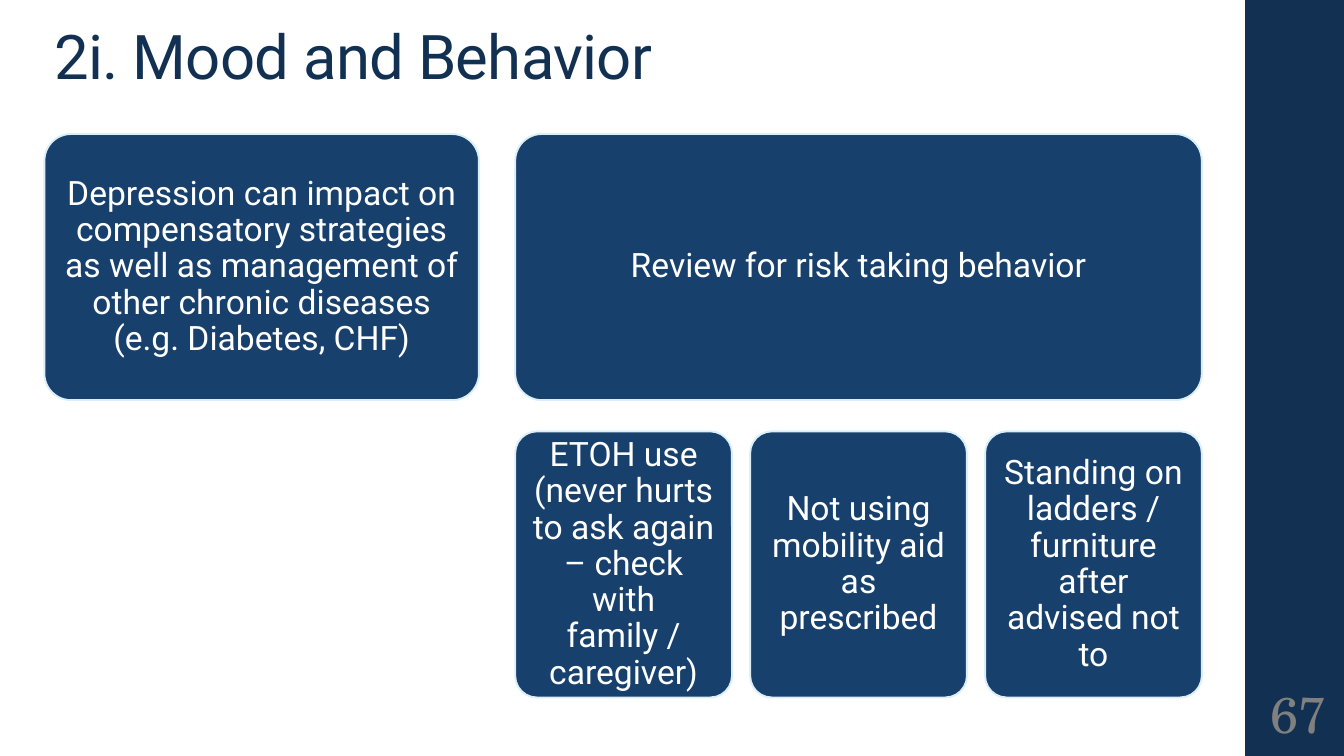
from pptx import Presentation
from pptx.dml.color import RGBColor
from pptx.enum.shapes import MSO_SHAPE
from pptx.enum.text import MSO_ANCHOR, PP_ALIGN
from pptx.util import Inches, Pt

RECTANGLE, ROUNDED = MSO_SHAPE.RECTANGLE, MSO_SHAPE.ROUNDED_RECTANGLE
MIDDLE, BOTTOM = MSO_ANCHOR.MIDDLE, MSO_ANCHOR.BOTTOM
LEFT, CENTER = PP_ALIGN.LEFT, PP_ALIGN.CENTER

NAVY = RGBColor(0x11, 0x30, 0x52)
BLUE = RGBColor(0x17, 0x40, 0x6D)
PALE = RGBColor(0xDB, 0xEF, 0xF9)
WHITE = RGBColor(0xFF, 0xFF, 0xFF)
GRAY = RGBColor(0x80, 0x80, 0x80)
SANS, SERIF = "Roboto", "TeX Gyre Schola"

TITLE = "2i. Mood and Behavior"
PAGE_NUMBER = "67"
DEPRESSION = ("Depression can impact on compensatory strategies as well as "
              "management of other chronic diseases (e.g. Diabetes, CHF)")
RISK = "Review for risk taking behavior"
RISK_EXAMPLES = [
    "ETOH use (never hurts to ask again – check with family / caregiver)",
    "Not using mobility aid as prescribed",
    "Standing on ladders / furniture after advised not to",
]

WIDTH, HEIGHT = 13.33, 7.5
BAND_LEFT, BAND_WIDTH = 12.35, 1
MARGIN = 0.44
CARD_HEIGHT = 2.64
ROW_TOPS = [1.33, 4.28]
DEPRESSION_WIDTH = 4.31
RISK_LEFT = 5.11
EXAMPLE_WIDTH, EXAMPLE_STEP = 2.15, 2.33
RISK_WIDTH = EXAMPLE_STEP * (len(RISK_EXAMPLES) - 1) + EXAMPLE_WIDTH


def write(shape, text, size, font, color, align, anchor, inset=0.1, spacing=0.9):
    frame = shape.text_frame
    frame.word_wrap = True
    frame.vertical_anchor = anchor
    frame.margin_left = frame.margin_right = Inches(inset)
    frame.margin_top = frame.margin_bottom = Inches(min(inset, 0.1))
    frame.text = text
    para = frame.paragraphs[0]
    para.alignment = align
    para.line_spacing = spacing
    span = para.runs[0]
    span.font.size = Pt(size)
    span.font.name = font
    span.font.color.rgb = color
    return span


def add_block(page, kind, left, top, width, height, fill):
    block = page.shapes.add_shape(
        kind, Inches(left), Inches(top), Inches(width), Inches(height))
    block.shadow.inherit = False
    block.fill.solid()
    block.fill.fore_color.rgb = fill
    block.line.fill.background()
    return block


def add_card(page, text, left, top, width):
    card = add_block(page, ROUNDED, left, top, width, CARD_HEIGHT, BLUE)
    card.adjustments[0] = 0.1
    card.line.color.rgb = PALE
    card.line.width = Pt(1.35)
    write(card, text, 24, SANS, WHITE, CENTER, MIDDLE)


def add_text(page, left, top, width, height):
    return page.shapes.add_textbox(
        Inches(left), Inches(top), Inches(width), Inches(height))


def main():
    deck = Presentation()
    deck.slide_width, deck.slide_height = Inches(WIDTH), Inches(HEIGHT)
    page = deck.slides.add_slide(deck.slide_layouts[6])

    add_block(page, RECTANGLE, BAND_LEFT, 0, BAND_WIDTH, HEIGHT, NAVY)
    title = add_text(page, MARGIN, 0.2, 7.95, 0.77)
    span = write(title, TITLE, 44, SANS, NAVY, LEFT, BOTTOM)
    title.text_frame.margin_top = title.text_frame.margin_bottom = Inches(0.05)
    span.font._element.set("spc", "-50")

    add_card(page, DEPRESSION, MARGIN, ROW_TOPS[0], DEPRESSION_WIDTH)
    add_card(page, RISK, RISK_LEFT, ROW_TOPS[0], RISK_WIDTH)
    for column, example in enumerate(RISK_EXAMPLES):
        add_card(page, example, RISK_LEFT + column * EXAMPLE_STEP,
                 ROW_TOPS[1], EXAMPLE_WIDTH)

    number = add_text(page, 12.5, 6.75, 0.75, 0.65)
    write(number, PAGE_NUMBER, 36, SERIF, GRAY, CENTER, MIDDLE, 0.05, 1.0)
    deck.save("out.pptx")


if __name__ == "__main__":
    main()
